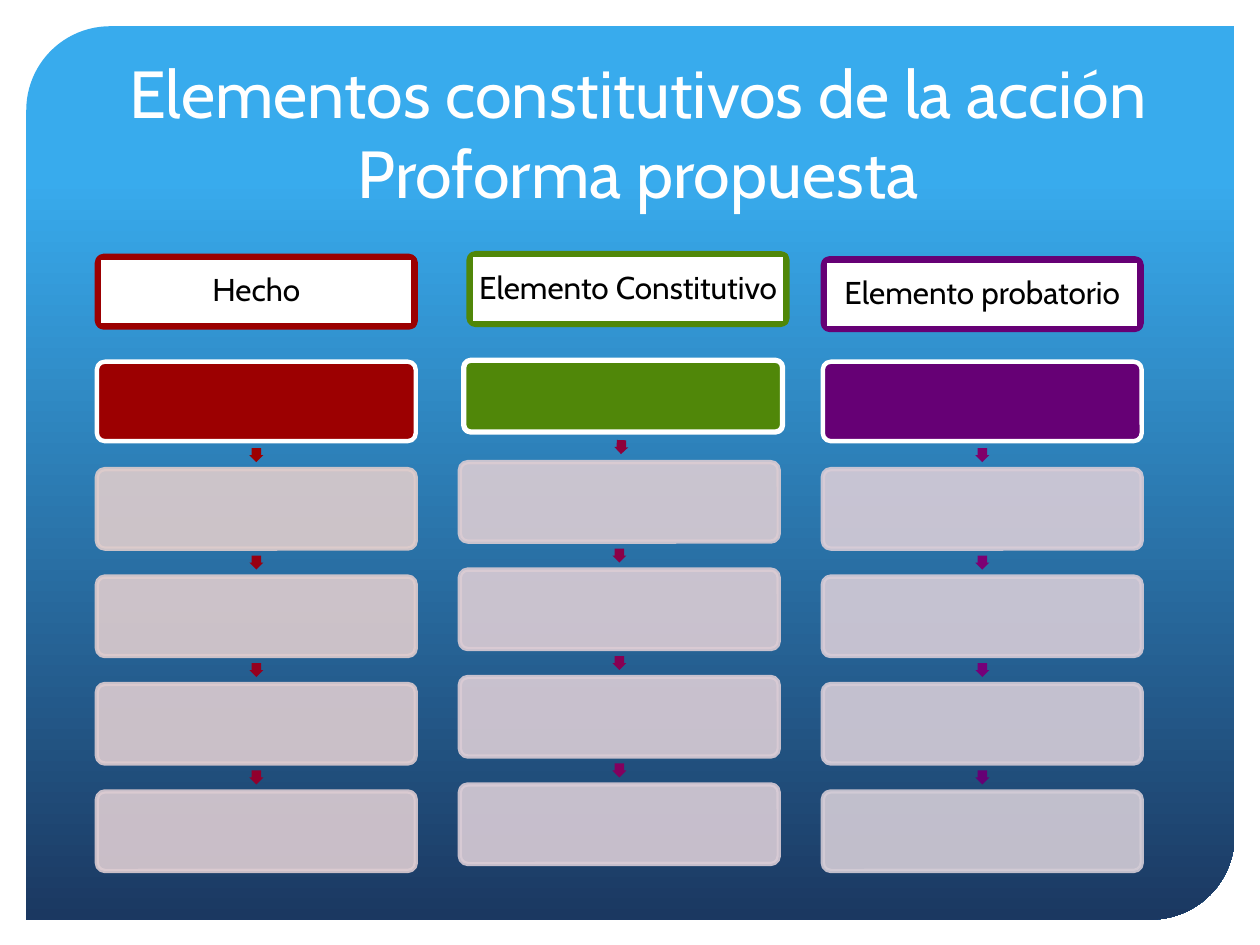
import math

import lxml.etree
import pptx
import pptx.dml.color
import pptx.enum.shapes
import pptx.enum.text
import pptx.oxml.ns
import pptx.util

Pt = pptx.util.Pt
SHAPE = pptx.enum.shapes.MSO_SHAPE
ANCHOR = pptx.enum.text.MSO_ANCHOR
ALIGN = pptx.enum.text.PP_ALIGN

COLORS = {
    "white": "FFFFFF", "black": "000000",
    "sky": "38ABED", "navy": "1B3861",
    "red": "9C0001", "green": "508709", "purple": "660075",
}
CARD_WIDTH, CARD_HEIGHT, CARD_PITCH = 182.2, 45.4, 61.4
HEADER_HEIGHT, ARROW_SIZE = 41, 8

COLUMNS = [
    {"label": "Hecho", "color": "red", "header": (55.4, 146.2),
     "lead": (55.4, 206.7, CARD_HEIGHT), "line": 2.5, "cards": (55.4, 268.1),
     "tints": ["DECCCC", "DECCCE", "DDCCD0", "DCCCD2"],
     "arrows": ["9C0001", "980011", "95001F", "91002D"]},
    {"label": "Elemento Constitutivo", "color": "green", "header": (267.8, 144.7),
     "lead": (265, 205.9, HEADER_HEIGHT), "line": 3, "cards": (262.8, 264.1),
     "tints": ["DBCCD3", "DBCCD4", "DACCD5", "D9CCD6"],
     "arrows": ["8E003B", "8A0047", "870053", "83005E"]},
    {"label": "Elemento probatorio", "color": "purple", "header": (470.2, 147.6),
     "lead": (470.2, 206.7, CARD_HEIGHT), "line": 2.5, "cards": (470.2, 268.1),
     "tints": ["D8CCD7", "D7CCD7", "D5CCD7", "D3CCD6"],
     "arrows": ["800069", "7C0073", "750079", "660075"]},
]


class SlideBuilder:
    """Holds the style and the current slide, and draws each kind of element."""

    def __init__(self, deck, font="Cabin"):
        self.font = font
        self.slide = deck.slides.add_slide(deck.slide_layouts[5])

    def rgb(self, color):
        return pptx.dml.color.RGBColor.from_string(COLORS.get(color, color))

    def fade(self, shape, opacity):
        for color in shape._element.spPr.iter(pptx.oxml.ns.qn("a:srgbClr")):
            alpha = lxml.etree.SubElement(color, pptx.oxml.ns.qn("a:alpha"))
            alpha.set("val", str(opacity * 1000))

    def shape(self, kind, left, top, width, height, fill, line=None, weight=2.5):
        shape = self.slide.shapes.add_shape(kind, Pt(left), Pt(top), Pt(width), Pt(height))
        shape.shadow.inherit = False
        shape.fill.solid()
        shape.fill.fore_color.rgb = self.rgb(fill)
        if line:
            shape.line.color.rgb = self.rgb(line)
            shape.line.width = Pt(weight)
        else:
            shape.line.fill.background()
        return shape

    def set_text(self, shape, text, size, color, anchor):
        frame = shape.text_frame
        frame.text = text
        frame.word_wrap = True
        frame.vertical_anchor = anchor
        para = frame.paragraphs[0]
        para.alignment = ALIGN.CENTER
        span = para.runs[0]
        span.font.name = self.font
        span.font.size = Pt(size)
        span.font.color.rgb = self.rgb(color)
        return frame

    def panel(self):
        panel = self.shape(SHAPE.ROUND_2_DIAG_RECTANGLE, 15, 15, 690.5, 510.5, "sky")
        panel.adjustments[0], panel.adjustments[1] = 0.094, 0
        panel.fill.gradient()
        panel.fill.gradient_angle = 270
        stops = [("sky", 0.17), ("navy", 1)]
        for stop, (color, position) in zip(panel.fill.gradient_stops, stops):
            stop.color.rgb = self.rgb(color)
            stop.position = position
        self.slide.shapes._spTree.insert(2, panel._element)

    def title(self, text):
        title = self.slide.shapes.title
        title.left, title.top, title.width, title.height = map(Pt, (66.2, 42.5, 596.9, 82.1))
        frame = self.set_text(title, text, 38, "white", ANCHOR.BOTTOM)
        frame.auto_size = pptx.enum.text.MSO_AUTO_SIZE.NONE

    def card(self, left, top, height, fill, line, weight=2.5, opacity=100):
        card = self.shape(SHAPE.ROUNDED_RECTANGLE, left, top, CARD_WIDTH, height,
                          fill, line, weight)
        card.adjustments[0] = 0.1
        if opacity < 100:
            self.fade(card, opacity)
        return card

    def arrow(self, upper, lower, color):
        start_x, end_x = (card.left.pt + card.width.pt / 2 for card in (upper, lower))
        start_y, end_y = (card.top.pt + card.height.pt / 2 for card in (upper, lower))
        gap_middle = (upper.top.pt + upper.height.pt + lower.top.pt) / 2
        left = (start_x + end_x - ARROW_SIZE) / 2
        top = gap_middle - ARROW_SIZE / 2
        arrow = self.shape(SHAPE.RIGHT_ARROW, left, top, ARROW_SIZE, ARROW_SIZE, color)
        arrow.adjustments[0], arrow.adjustments[1] = 0.667, 0.5
        arrow.rotation = math.degrees(math.atan2(end_y - start_y, end_x - start_x))

    def header(self, left, top, text, color):
        self.card(left, top, HEADER_HEIGHT, "white", color)
        label = self.shape(SHAPE.RECTANGLE, left + 1.2, top + 1.2, CARD_WIDTH - 2.4,
                           HEADER_HEIGHT - 2.4, "white", color)
        frame = self.set_text(label, text, 18, "black", ANCHOR.MIDDLE)
        frame.margin_left = frame.margin_right = Pt(2)
        frame.margin_top = frame.margin_bottom = Pt(2)
        frame.paragraphs[0].line_spacing = 0.9

    def column(self, column):
        left, top, height = column["lead"]
        upper = self.card(left, top, height, column["color"], "white", column["line"])
        left, top = column["cards"]
        for row, (tint, color) in enumerate(zip(column["tints"], column["arrows"])):
            lower = self.card(left, top + row * CARD_PITCH, CARD_HEIGHT, tint, tint, opacity=90)
            self.arrow(upper, lower, color)
            upper = lower
        self.header(*column["header"], column["label"], column["color"])


def main():
    deck = pptx.Presentation()
    deck.slide_width, deck.slide_height = Pt(720), Pt(540)
    builder = SlideBuilder(deck)
    builder.panel()
    builder.title("Elementos constitutivos de la acción Proforma propuesta")
    for column in COLUMNS:
        builder.column(column)
    deck.save("out.pptx")


if __name__ == "__main__":
    main()
